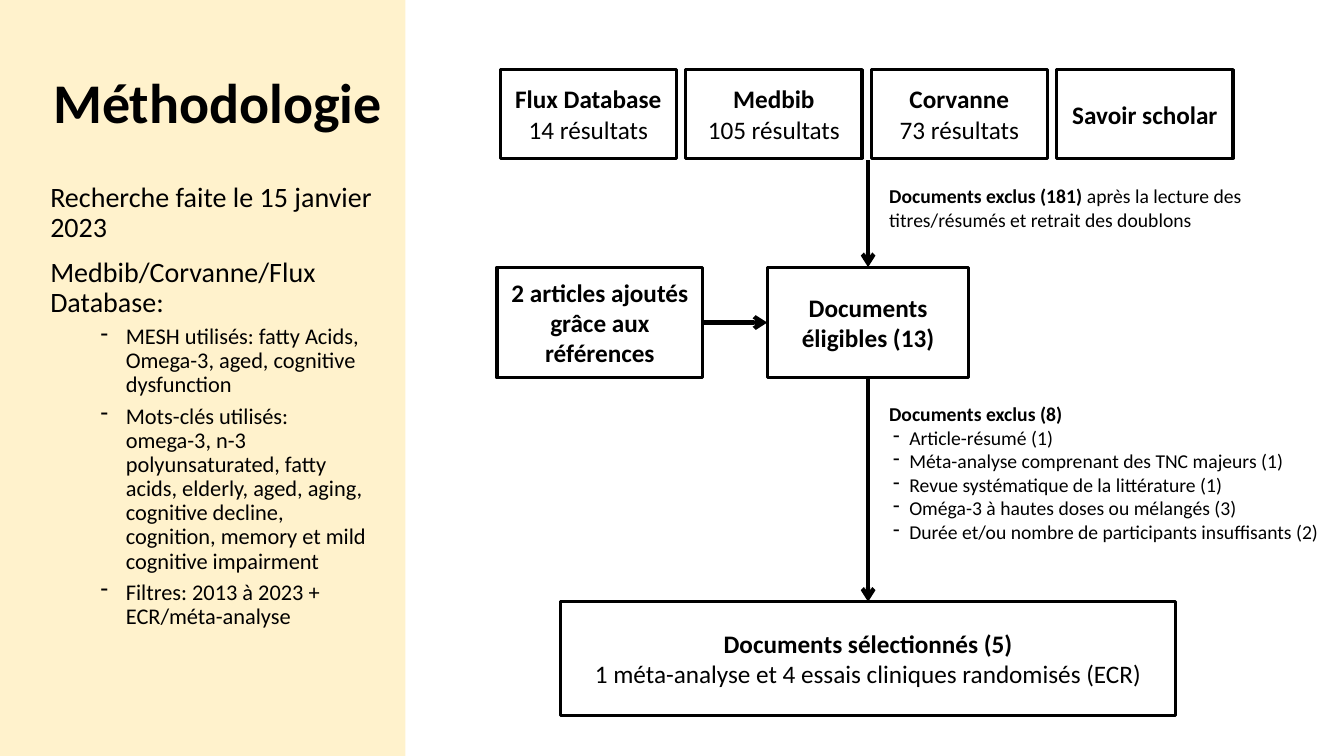
from lxml import etree
from pptx import Presentation
from pptx import util as u
from pptx.dml.color import RGBColor
from pptx.enum import shapes, text
from pptx.oxml import ns

BLACK = RGBColor(0x00, 0x00, 0x00)
CREAM = RGBColor(0xFF, 0xF2, 0xCC)
SCALE = 9144
TOP, LEFT, BOTTOM, RIGHT = range(4)


def px(n):
    return u.Emu(n * SCALE)


class Deck:
    font = "Calibri"

    def __init__(self, wide, high):
        self.file = Presentation()
        self.file.slide_width = px(wide)
        self.file.slide_height = px(high)
        self.slide = self.file.slides.add_slide(self.file.slide_layouts[6])

    def rect(self, x, y, w, h, fill=None):
        box = self.slide.shapes.add_shape(
            shapes.MSO_SHAPE.RECTANGLE, px(x), px(y), px(w), px(h))
        box.shadow.inherit = False
        if fill is None:
            box.fill.background()
            box.line.color.rgb = BLACK
            box.line.width = u.Pt(2.25)
        else:
            box.fill.solid()
            box.fill.fore_color.rgb = fill
            box.line.fill.background()
        return box

    def para(self, frame, words, size, bold=False, hang=None):
        par = frame.paragraphs[0]
        if par.runs:
            par = frame.add_paragraph()
        if hang:
            left, back = hang
            prop = par._p.get_or_add_pPr()
            prop.set("marL", str(px(left)))
            prop.set("indent", str(px(-back)))
            etree.SubElement(prop, ns.qn("a:buChar")).set("char", "-")
        par.font.name = self.font
        par.font.size = u.Pt(size)
        par.font.color.rgb = BLACK
        par.font.bold = bold
        par.add_run().text = words
        return par

    def node(self, x, y, w, h, head, note=None):
        box = self.rect(x, y, w, h)
        frame = box.text_frame
        frame.word_wrap = True
        frame.vertical_anchor = text.MSO_ANCHOR.MIDDLE
        self.para(frame, head, 18, True)
        if note:
            self.para(frame, note, 18)
        for par in frame.paragraphs:
            par.alignment = text.PP_ALIGN.CENTER
        return box

    def label(self, x, y, w, h):
        frame = self.slide.shapes.add_textbox(px(x), px(y), px(w), px(h)).text_frame
        frame.word_wrap = True
        return frame

    def arrow(self, x1, y1, x2, y2):
        line = self.slide.shapes.add_connector(
            shapes.MSO_CONNECTOR.STRAIGHT, px(x1), px(y1), px(x2), px(y2))
        line.line.color.rgb = BLACK
        line.line.width = u.Pt(3)
        tip = etree.SubElement(line.line._get_or_add_ln(), ns.qn("a:tailEnd"))
        tip.set("type", "arrow")
        etree.SubElement(line._element.spPr, ns.qn("a:effectLst"))
        return line


def main():
    deck = Deck(1333, 750)

    deck.rect(0, 0, 402, 750, CREAM)
    title = deck.label(43, 32, 378, 145)
    title.vertical_anchor = text.MSO_ANCHOR.MIDDLE
    deck.para(title, "Méthodologie", 40, True).line_spacing = 0.9

    body = deck.label(40, 177, 339, 476)
    for words in ("Recherche faite le 15 janvier 2023",
                  "Medbib/Corvanne/Flux Database:"):
        par = deck.para(body, words, 20)
        par.line_spacing = 0.9
        par.space_before = u.Pt(10)
    for words in (
            "MESH utilisés: fatty Acids, Omega-3, aged, cognitive dysfunction",
            "Mots-clés utilisés: omega-3, n-3 polyunsaturated, fatty acids, "
            "elderly, aged, aging, cognitive decline, cognition, memory et "
            "mild cognitive impairment",
            "Filtres: 2013 à 2023 + ECR/méta-analyse"):
        par = deck.para(body, words, 16, hang=(75, 25))
        par.line_spacing = 0.9
        par.space_before = u.Pt(5)

    bases = (("Flux Database", "14 résultats"), ("Medbib", "105 résultats"),
             ("Corvanne", "73 résultats"), ("Savoir scholar", None))
    for i, (name, count) in enumerate(bases):
        deck.node(496 + 184 * i, 69, 175, 88, name, count)

    added = deck.node(493, 265, 204, 110, "2 articles ajoutés grâce aux références")
    fit = deck.node(761, 265, 200, 110, "Documents éligibles (13)")
    final = deck.node(556, 597, 610, 113, "Documents sélectionnés (5)",
                      "1 méta-analyse et 4 essais cliniques randomisés (ECR)")

    first = deck.label(872, 178, 381, 57)
    par = deck.para(first, "Documents exclus (181) ", 14)
    par.runs[0].font.bold = True
    par.add_run().text = "après la lecture des titres/résumés et retrait des doublons"

    second = deck.label(872, 394, 464, 151)
    deck.para(second, "Documents exclus (8)", 14, True)
    for words in ("Article-résumé (1)",
                  "Méta-analyse comprenant des TNC majeurs (1)",
                  "Revue systématique de la littérature (1)",
                  "Oméga-3 à hautes doses ou mélangés (3)",
                  "Durée et/ou nombre de participants insuffisants (2)"):
        deck.para(second, words, 14, hang=(20, 16))

    deck.arrow(861, 159, 861, 265).end_connect(fit, TOP)
    down = deck.arrow(861, 375, 861, 597)
    down.begin_connect(fit, BOTTOM)
    down.end_connect(final, TOP)
    side = deck.arrow(697, 320, 761, 320)
    side.begin_connect(added, RIGHT)
    side.end_connect(fit, LEFT)

    deck.file.save("out.pptx")


if __name__ == "__main__":
    main()
